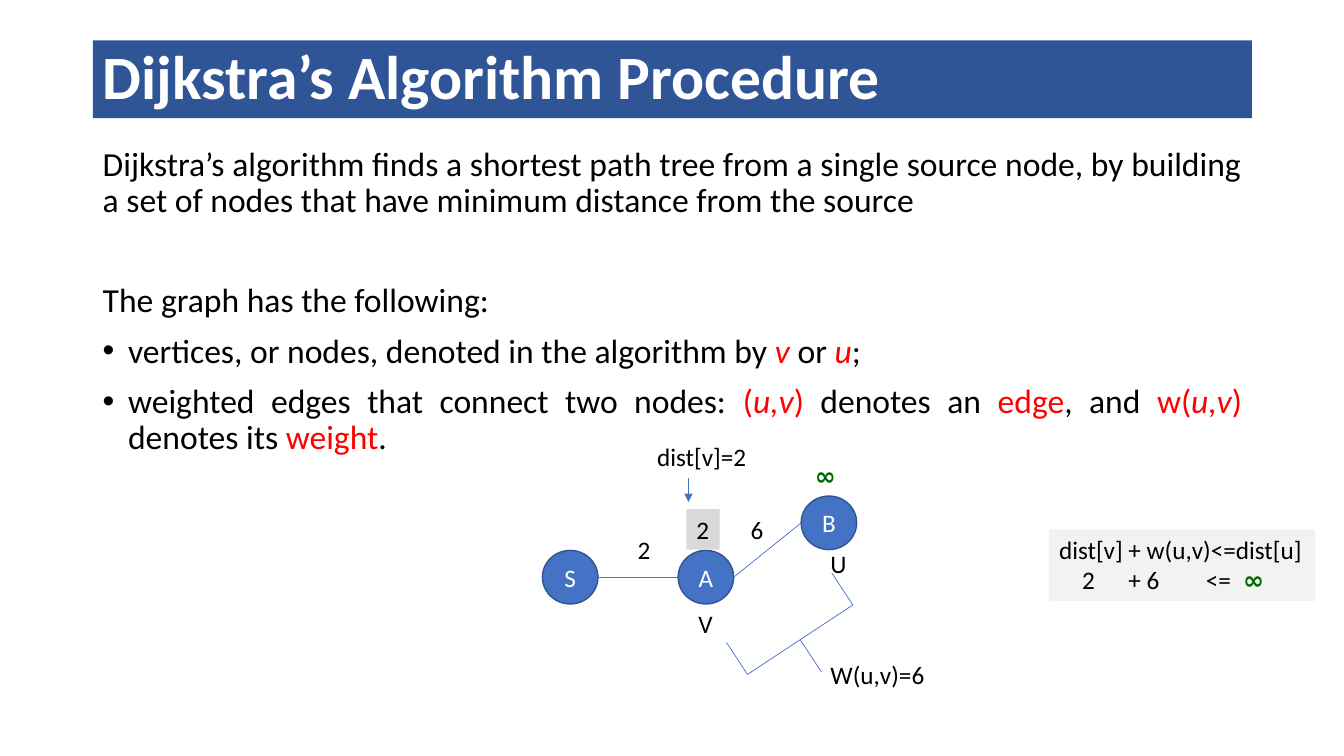
import lxml.etree
import pptx
import pptx.dml.color
import pptx.enum.shapes
import pptx.enum.text
import pptx.oxml.ns
import pptx.util

Cm = pptx.util.Cm
Pt = pptx.util.Pt
qn = pptx.oxml.ns.qn
Align = pptx.enum.text.PP_ALIGN
Anchor = pptx.enum.text.MSO_ANCHOR
Preset = pptx.enum.shapes.MSO_SHAPE

BLACK, WHITE, RED, GREEN = "000000", "FFFFFF", "FF0000", "006600"
BLUE, OUTLINE, BANNER = "4472C4", "325491", "2F5597"
PLAIN = {"size": Pt(18), "name": "Calibri"}
BODY = {"size": Pt(24), "name": "Calibri"}
TITLE = {"size": Pt(44), "name": "Calibri", "bold": True}
INFINITY = {"size": Pt(18), "name": "Comic Neue", "bold": True}

title = "Dijkstra’s Algorithm Procedure"
title_place = (2.34, 1.02, 29.21, 1.96)
body_place = (2.34, 3.58, 29.21, 13.59)
body = [
    (False, 10, [("Dijkstra’s algorithm finds a shortest path tree from a single source node, "
                  "by building a set of nodes that have minimum distance from the source", BLACK, False)]),
    (False, 46, [("The graph has the following:", BLACK, False)]),
    (True, 10, [("vertices, or nodes, denoted in the algorithm by ", BLACK, False),
                ("v ", RED, True), ("or ", BLACK, False), ("u", RED, True), (";", BLACK, False)]),
    (True, 10, [("weighted edges that connect two nodes: ", BLACK, False),
                ("(", RED, False), ("u,v", RED, True), (") ", RED, False),
                ("denotes an ", BLACK, False), ("edge", RED, False), (", and ", BLACK, False),
                ("w(", RED, False), ("u,v", RED, True), (") ", RED, False),
                ("denotes its ", BLACK, False), ("weight", RED, False), (".", BLACK, False)]),
]

node_width, node_height = 1.4, 1.35
nodes = {"S": (13.67, 13.87), "A": (17.09, 13.87), "B": (20.19, 12.5)}
edges = [("S", "A"), ("A", "B")]
label_height = 1.02
labels = [
    ("V", 17.35, 15.21, 0.89),
    ("U", 20.68, 13.69, 0.91),
    ("6", 18.67, 12.83, 0.84),
    ("W(u,v)=6", 20.68, 16.48, 2.92),
    ("2", 15.82, 13.34, 0.84),
    ("dist[v]=2", 16.31, 11.0, 2.77),
]
distance_place = (17.3, 12.83, 0.84, label_height)
infinities = [(19.94, 11.48), (30.73, 14.1)]
infinity_width = 1.5
check_place = (26.44, 13.34, 6.71, 1.8)
check = ["dist[v] + w(u,v)<=dist[u]", "\t2\t+ 6\t<="]
check_tabs = [0.58, 1.75, 3.7]
brace_place = (19.2, 14.53, 1.93, 3.18)
brace_angle = 56.6
arrow = (17.35, 12.04, 17.35, 12.65)

deck = pptx.Presentation()
deck.slide_width, deck.slide_height = Cm(33.87), Cm(19.05)
page = deck.slides.add_slide(deck.slide_layouts[6])


def paint(format_part, color):
    format_part.rgb = pptx.dml.color.RGBColor.from_string(color)


def add_span(para, text, style, color, **extra):
    span = para.add_run()
    span.text = text
    for name, value in {**style, **extra}.items():
        setattr(span.font, name, value)
    paint(span.font.color, color)


def add_box(place, fill=None, wrap=True, anchor=Anchor.TOP):
    lengths = [Cm(length) for length in place]
    if fill:
        box = page.shapes.add_shape(Preset.RECTANGLE, *lengths)
        box.shadow.inherit = False
        box.fill.solid()
        paint(box.fill.fore_color, fill)
        box.line.fill.background()
    else:
        box = page.shapes.add_textbox(*lengths)
    box.text_frame.word_wrap = wrap
    box.text_frame.vertical_anchor = anchor
    return box.text_frame


def write(frame, text, style, color, align=Align.LEFT):
    para = frame.paragraphs[0]
    para.alignment = align
    add_span(para, text, style, color)
    return para


def outline(shape, color, width):
    shape.line.fill.solid()
    paint(shape.line.fill.fore_color, color)
    shape.line.width = Pt(width)


def add_line(ends, arrowhead=False):
    line = page.shapes.add_connector(
        pptx.enum.shapes.MSO_CONNECTOR.STRAIGHT, *[Cm(length) for length in ends])
    outline(line, BLUE, 0.5)
    properties = line.element.spPr
    if arrowhead:
        lxml.etree.SubElement(properties.find(qn("a:ln")), qn("a:tailEnd"), type="triangle")
    lxml.etree.SubElement(properties, qn("a:effectLst"))


body_frame = add_box(body_place)
for index, (bulleted, gap, spans) in enumerate(body):
    para = body_frame.add_paragraph() if index else body_frame.paragraphs[0]
    for name, value in {"alignment": Align.JUSTIFY, "line_spacing": 0.9, "space_before": Pt(gap)}.items():
        setattr(para, name, value)
    if bulleted:
        properties = para._p.get_or_add_pPr()
        properties.set("marL", str(Cm(0.64)))
        properties.set("indent", str(-Cm(0.64)))
        lxml.etree.SubElement(properties, qn("a:buFont"), typeface="Arial")
        lxml.etree.SubElement(properties, qn("a:buChar"), char="•")
    for text, color, italic in spans:
        add_span(para, text, BODY, color, italic=italic)

write(add_box(title_place, BANNER, anchor=Anchor.MIDDLE), title, TITLE, WHITE).line_spacing = 0.9

for name, (left, top) in nodes.items():
    node = page.shapes.add_shape(Preset.OVAL, Cm(left), Cm(top), Cm(node_width), Cm(node_height))
    node.shadow.inherit = False
    node.fill.solid()
    paint(node.fill.fore_color, BLUE)
    outline(node, OUTLINE, 1)
    node.text_frame.vertical_anchor = Anchor.MIDDLE
    write(node.text_frame, name, PLAIN, WHITE, Align.CENTER)

for start, end in edges:
    (start_left, start_top), (end_left, end_top) = nodes[start], nodes[end]
    add_line((start_left + node_width, start_top + node_height / 2, end_left, end_top + node_height / 2))

for text, left, top, width in labels:
    write(add_box((left, top, width, label_height), wrap=False), text, PLAIN, BLACK)
write(add_box(distance_place, "D9D9D9", wrap=False), "2", PLAIN, BLACK)

check_frame = add_box(check_place, "F2F2F2")
check_frame.margin_right = 0
write(check_frame, check[0], PLAIN, BLACK)
values = check_frame.add_paragraph()
values.alignment = Align.LEFT
add_span(values, check[1], PLAIN, BLACK)
tab_list = lxml.etree.SubElement(values._p.get_or_add_pPr(), qn("a:tabLst"))
for position in check_tabs:
    lxml.etree.SubElement(tab_list, qn("a:tab"), pos=str(Cm(position)), algn="l")

for left, top in infinities:
    frame = add_box((left, top, infinity_width, label_height))
    for side in ("left", "right", "top", "bottom"):
        setattr(frame, "margin_" + side, Cm(0.13))
    write(frame, " ∞", INFINITY, GREEN, Align.CENTER)

brace = page.shapes.add_shape(Preset.RIGHT_BRACE, *[Cm(length) for length in brace_place])
brace.shadow.inherit = False
brace.fill.background()
outline(brace, BLUE, 0.5)
brace.adjustments[0], brace.adjustments[1] = 0, 0.5
brace.rotation = brace_angle

add_line(arrow, arrowhead=True)

deck.save("out.pptx")
